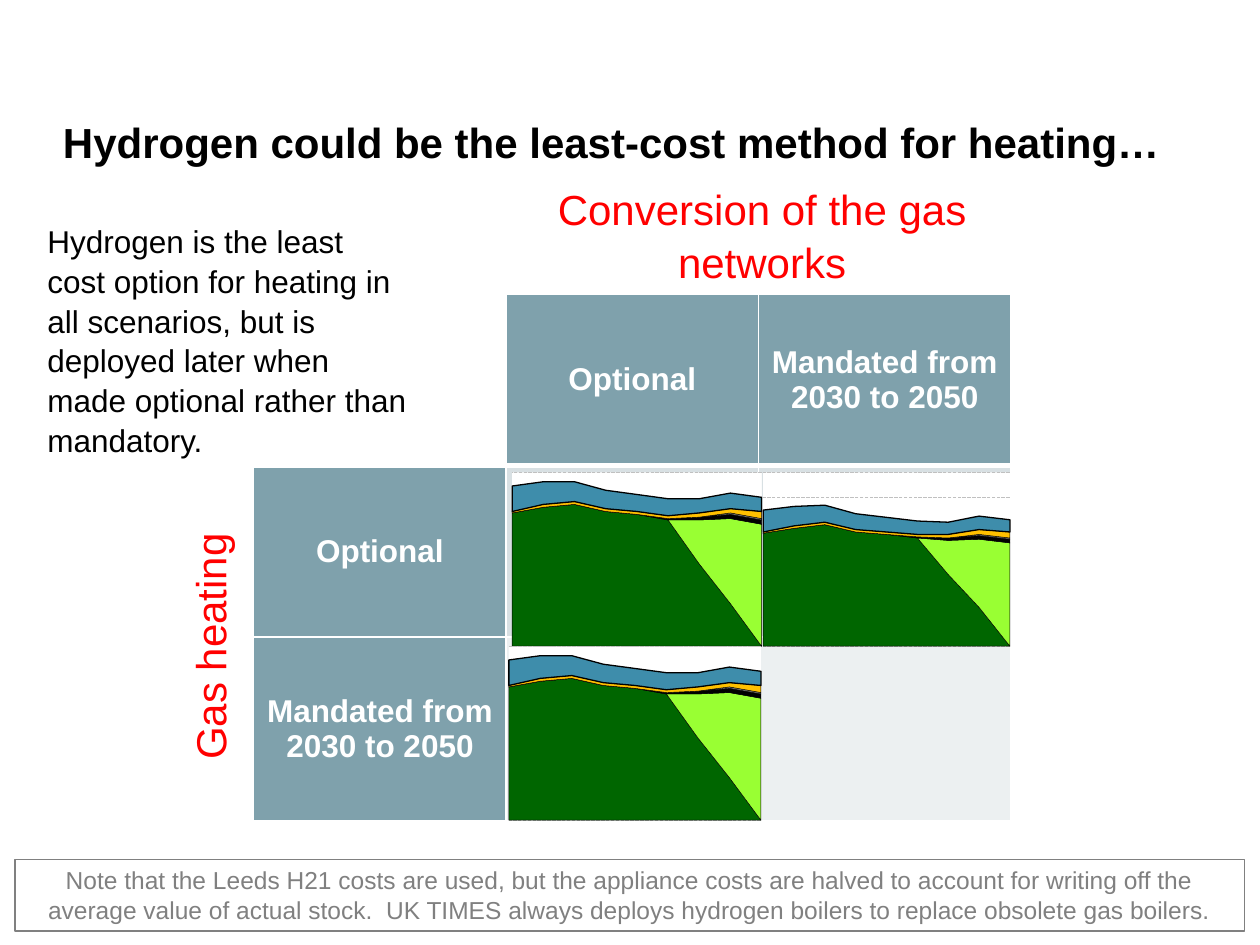
"""Build the slide on hydrogen as the least-cost heating method."""
from lxml import etree
from pptx import Presentation
from pptx.chart.data import CategoryChartData
from pptx.dml.color import RGBColor
from pptx.enum.chart import XL_CHART_TYPE
from pptx.enum.dml import MSO_LINE
from pptx.enum.shapes import MSO_SHAPE
from pptx.enum.text import MSO_ANCHOR, PP_ALIGN
from pptx.oxml import parse_xml
from pptx.oxml.ns import nsdecls, qn
from pptx.util import Pt

LEFT, CENTER = PP_ALIGN.LEFT, PP_ALIGN.CENTER
TOP, MIDDLE = MSO_ANCHOR.TOP, MSO_ANCHOR.MIDDLE
AREA, RECTANGLE = XL_CHART_TYPE.AREA_STACKED, MSO_SHAPE.RECTANGLE
LONG_DASH = MSO_LINE.LONG_DASH

TITLE = "Hydrogen could be the least-cost method for heating…"
MESSAGE = ("Hydrogen is the least cost option for heating in all scenarios, "
           "but is deployed later when made optional rather than mandatory.")
NOTE = ("Note that the Leeds H21 costs are used, but the appliance costs are halved "
        "to account for writing off the average value of actual stock.  UK TIMES "
        "always deploys hydrogen boilers to replace obsolete gas boilers.")
OPTIONAL, MANDATED = "Optional", "Mandated from 2030 to 2050"
HEADER_FILL = "7FA1AC"
TABLE_ROWS = [
    [("", "FFFFFF"), (OPTIONAL, HEADER_FILL), (MANDATED, HEADER_FILL)],
    [(OPTIONAL, HEADER_FILL), ("", "D8E0E3"), ("", "D8E0E3")],
    [(MANDATED, HEADER_FILL), ("", "ECF0F1"), ("", "ECF0F1")],
]
ROW_HEIGHTS = [98, 98, 105]
COLUMN_WIDTH = 144.25

SERIES_STYLES = [("006600", 0.25), ("99FF33", 0.25), ("000000", 0.25),
                 ("7F7F7F", 0.25), ("FFC000", 0.25), ("3E8DAB", 0.75)]
OPTIONAL_NETWORK = [
    [94, 98, 100, 95, 93, 89, 58, 30, 0],
    [0, 0, 0, 0, 0, 0, 31, 60, 86],
    [0, 0, 0, 0, 0, 1, 2, 3, 3],
    [0, 0, 0, 0, 0, 0, 0, 1, 1],
    [1, 2, 2, 2, 2, 2, 3, 3, 5],
    [18, 16, 14, 13, 12, 12, 10, 11, 10],
]
MANDATED_NETWORK = [
    [93, 97, 100, 94, 92, 89, 59, 32, 0],
    [0, 0, 0, 0, 0, 0, 28, 56, 85],
    [0, 0, 0, 0, 0, 1, 2, 3, 3],
    [0, 0, 0, 0, 0, 0, 0, 1, 1],
    [1, 2, 2, 2, 2, 2, 3, 4, 5],
    [18, 16, 14, 13, 12, 11, 10, 11, 10],
]
GRID_STEP = 20.4
CHART_HEIGHT = 99.4
CHARTS = [
    (435.7, 270, 141.8, 7, MANDATED_NETWORK),
    (292.3, 270, 143.3, 6, OPTIONAL_NETWORK),
    (290.4, 369.4, 144.8, 6, OPTIONAL_NETWORK),
]


def color(value):
    return RGBColor.from_string(value)


def style_text(frame, size, hue, bold=False, align=LEFT, spacing=None):
    for paragraph in frame.paragraphs:
        paragraph.alignment = align
        paragraph.line_spacing = spacing
        for span in paragraph.runs:
            span.font.name, span.font.size, span.font.bold = "Arial", Pt(size), bold
            span.font.color.rgb = color(hue)


def add_text(page, text, place, size, hue, **style):
    box = page.shapes.add_textbox(*map(Pt, place))
    frame = box.text_frame
    frame.word_wrap = True
    frame.vertical_anchor = TOP
    frame.text = text
    style_text(frame, size, hue, **style)
    return box


def add_note(page):
    box = page.shapes.add_shape(RECTANGLE, Pt(8.5), Pt(491), Pt(702.5), Pt(41))
    box.shadow.inherit = False
    box.fill.background()
    box.line.color.rgb = color("808080")
    box.line.width = Pt(0.75)
    box.text_frame.word_wrap = True
    box.text_frame.vertical_anchor = TOP
    box.text_frame.text = NOTE
    style_text(box.text_frame, 14, "808080", align=CENTER)


def add_borders(cell, widths):
    properties = cell._tc.get_or_add_tcPr()
    for position, (side, width) in enumerate(widths.items()):
        properties.insert(position, parse_xml(
            f'<a:ln{side} {nsdecls("a")} w="{Pt(width)}"><a:solidFill>'
            f'<a:srgbClr val="FFFFFF"/></a:solidFill></a:ln{side}>'))


def add_scenario_table(page):
    table = page.shapes.add_table(3, 3, Pt(145), Pt(168), Pt(3 * COLUMN_WIDTH),
                                  Pt(sum(ROW_HEIGHTS))).table
    table.first_row = table.horz_banding = False
    for column in table.columns:
        column.width = Pt(COLUMN_WIDTH)
    for row_index, row in enumerate(TABLE_ROWS):
        table.rows[row_index].height = Pt(ROW_HEIGHTS[row_index])
        widths = {"L": 1, "R": 1, "T": 3 if row_index == 1 else 1,
                  "B": 3 if row_index == 0 else 1}
        for column_index, (text, fill) in enumerate(row):
            cell = table.cell(row_index, column_index)
            cell.text = text
            cell.vertical_anchor = MIDDLE
            cell.fill.solid()
            cell.fill.fore_color.rgb = color(fill)
            style_text(cell.text_frame, 18, "FFFFFF", bold=True, align=CENTER)
            add_borders(cell, widths)


def fill_plot_area(chart):
    white = (f'<c:spPr {nsdecls("c", "a")}><a:solidFill><a:srgbClr val="FFFFFF"/>'
             '</a:solidFill><a:ln><a:noFill/></a:ln></c:spPr>')
    space = chart._chartSpace
    space.find(qn("c:chart")).addnext(parse_xml(white))
    plot_area = space.find(".//" + qn("c:plotArea"))
    plot_area.append(parse_xml(white))
    for layout in plot_area.findall(qn("c:layout")):
        plot_area.remove(layout)
    layout = etree.Element(qn("c:layout"))
    manual = etree.SubElement(layout, qn("c:manualLayout"))
    for name, value in [("layoutTarget", "inner"), ("xMode", "edge"), ("yMode", "edge"),
                        ("x", "0"), ("y", "0"), ("w", "1"), ("h", "1")]:
        etree.SubElement(manual, qn("c:" + name)).set("val", value)
    plot_area.insert(0, layout)


def add_area_chart(page, left, top, width, steps, rows):
    data = CategoryChartData(number_format="0.0")
    data.categories = [str(number) for number in range(1, 10)]
    for number, values in enumerate(rows, 1):
        data.add_series(f"Series {number}", values)
    chart = page.shapes.add_chart(AREA, Pt(left), Pt(top), Pt(width),
                                  Pt(CHART_HEIGHT), data).chart
    chart.has_legend = chart.has_title = False
    chart.font.name, chart.font.size = "Calibri", Pt(12)
    chart.font.color.rgb = color("000000")
    chart.plots[0].vary_by_categories = False
    chart.category_axis.visible = False
    axis = chart.value_axis
    axis.visible = False
    axis.minimum_scale, axis.maximum_scale = 0, round(steps * GRID_STEP, 2)
    axis.major_unit = GRID_STEP
    axis.has_major_gridlines = True
    grid = axis.major_gridlines.format.line
    grid.color.rgb = color("C0C0C0")
    grid.width = Pt(0.25)
    grid.dash_style = LONG_DASH
    for series, (hue, line_width) in zip(chart.plots[0].series, SERIES_STYLES):
        series.format.fill.solid()
        series.format.fill.fore_color.rgb = color(hue)
        series.format.line.color.rgb = color("000000")
        series.format.line.width = Pt(line_width)
    chart._chartSpace.find(".//" + qn("c:crossBetween")).set("val", "midCat")
    fill_plot_area(chart)


def main():
    deck = Presentation()
    deck.slide_width, deck.slide_height = Pt(720), Pt(540)
    page = deck.slides.add_slide(deck.slide_layouts[6])
    title = add_text(page, TITLE, (36, 66.5, 648, 51), 24, "000000", bold=True).text_frame
    title.margin_left = title.margin_top = title.margin_right = title.margin_bottom = 0
    add_note(page)
    add_scenario_table(page)
    add_text(page, "Conversion of the gas networks", (268, 100, 335, 36), 24, "FF0000",
             align=CENTER, spacing=1.05)
    side_label = add_text(page, "Gas heating", (20, 351.5, 199.5, 36), 24, "FF0000",
                          align=CENTER)
    side_label.rotation = 270
    for chart in CHARTS:
        add_area_chart(page, *chart)
    add_text(page, MESSAGE, (20, 122.5, 221, 117), 18, "000000", spacing=1.05)
    deck.save("out.pptx")


if __name__ == "__main__":
    main()
